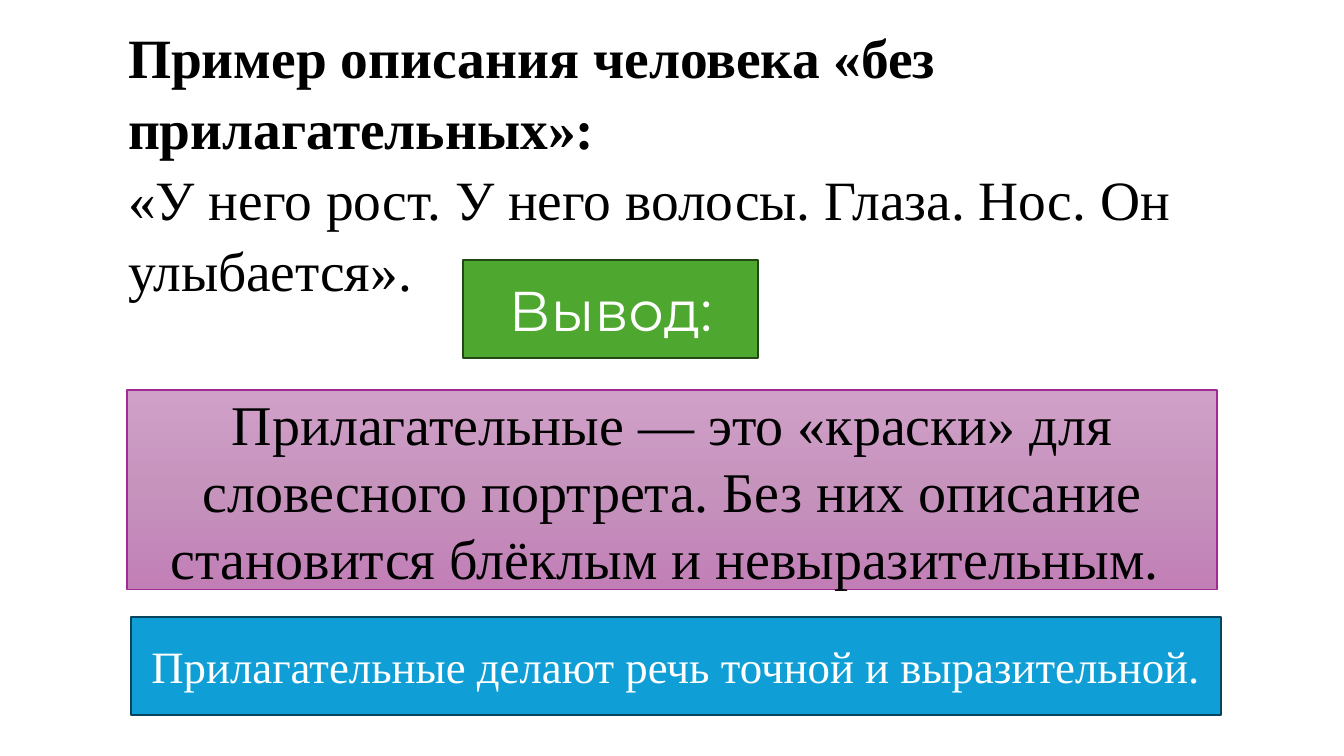
import copy

import lxml.etree
import pptx
import pptx.dml.color
import pptx.enum.dml
import pptx.enum.shapes
import pptx.enum.text
import pptx.oxml.ns
import pptx.util

Inches = pptx.util.Inches
Pt = pptx.util.Pt
qn = pptx.oxml.ns.qn

COLORS = {
    "background": "FFFFFF", "black": "000000", "white": "FFFFFF",
    "green": "4EA72E", "green_line": "224914",
    "blue": "0F9ED5", "blue_line": "07455D",
    "pink_top": "D0A0C8", "pink_middle": "C693BD", "pink_bottom": "C17FB6",
    "pink_line": "A02B93",
}
SERIF = "Times New Roman"


def color(name):
    return pptx.dml.color.RGBColor.from_string(COLORS[name])


def format_run(run, font_name, size, color_name, bold=False):
    run.font.name = font_name
    run.font.size = Pt(size)
    run.font.bold = bold
    run.font.color.rgb = color(color_name)


def add_example(slide, left, top, width, height):
    """Bold heading and sample description in the title placeholder."""
    title = slide.shapes.title
    title.left, title.top = Inches(left), Inches(top)
    title.width, title.height = Inches(width), Inches(height)
    frame = title.text_frame
    frame.word_wrap = True
    frame.auto_size = pptx.enum.text.MSO_AUTO_SIZE.NONE
    frame.vertical_anchor = pptx.enum.text.MSO_ANCHOR.MIDDLE

    paragraph = frame.paragraphs[0]
    paragraph.text = ("Пример описания человека «без прилагательных»:\v"
                      "«У него рост. У него волосы. Глаза. Нос. Он улыбается».")
    paragraph.alignment = pptx.enum.text.PP_ALIGN.LEFT
    paragraph.line_spacing = 1.07
    paragraph.space_after = Pt(8)
    properties = paragraph._p.get_or_add_pPr()
    properties.set("marL", str(Inches(0.25)))
    properties.set("indent", "0")

    heading, description = paragraph.runs
    format_run(heading, SERIF, 39.6, "black", bold=True)
    format_run(description, SERIF, 39.6, "black")
    # The line break takes the size of the text around it
    line_break = paragraph._p.find(qn("a:br"))
    lxml.etree.SubElement(line_break, qn("a:rPr")).set("sz", "3960")


def fill_gradient(shape, top, middle, bottom):
    """Vertical gradient of three evenly spaced colours."""
    shape.fill.gradient()
    shape.fill.gradient_angle = 270
    stop_list = shape._element.spPr.find(".//" + qn("a:gsLst"))
    stop_list.insert(1, copy.deepcopy(stop_list[0]))
    for index, (stop, name) in enumerate(
            zip(shape.fill.gradient_stops, (top, middle, bottom))):
        stop.position = index / 2
        stop.color.rgb = color(name)


def add_box(slide, left, top, width, height, text, font_name, size,
            text_color, fill_colors, line_color, line_width):
    """Outlined rectangle with centred text."""
    shape = slide.shapes.add_shape(
        pptx.enum.shapes.MSO_SHAPE.RECTANGLE,
        Inches(left), Inches(top), Inches(width), Inches(height))
    shape.shadow.inherit = False
    if len(fill_colors) == 1:
        shape.fill.solid()
        shape.fill.fore_color.rgb = color(fill_colors[0])
    else:
        fill_gradient(shape, *fill_colors)
    shape.line.color.rgb = color(line_color)
    shape.line.width = Pt(line_width)

    frame = shape.text_frame
    frame.word_wrap = True
    frame.vertical_anchor = pptx.enum.text.MSO_ANCHOR.MIDDLE
    frame.text = text
    paragraph = frame.paragraphs[0]
    paragraph.alignment = pptx.enum.text.PP_ALIGN.CENTER
    format_run(paragraph.runs[0], font_name, size, text_color)


def main():
    presentation = pptx.Presentation()
    presentation.slide_width = Inches(13.33)
    presentation.slide_height = Inches(7.5)
    slide = presentation.slides.add_slide(presentation.slide_layouts[5])
    slide.background.fill.solid()
    slide.background.fill.fore_color.rgb = color("background")

    add_example(slide, 0.92, 0, 11.5, 3.18)

    # Conclusion label
    add_box(slide, 4.59, 2.58, 2.93, 0.97, "Вывод:", "Montserrat", 40,
            "white", ["green"], "green_line", 1.5)
    # Main conclusion
    add_box(slide, 1.26, 3.87, 10.81, 1.98,
            "Прилагательные — это «краски» для словесного портрета. "
            "Без них описание становится блёклым и невыразительным. ",
            SERIF, 40, "black",
            ["pink_top", "pink_middle", "pink_bottom"], "pink_line", 1)
    # Summary
    add_box(slide, 1.3, 6.12, 10.81, 0.97,
            "Прилагательные делают речь точной и выразительной.",
            SERIF, 32, "white", ["blue"], "blue_line", 1.5)

    presentation.save("out.pptx")


if __name__ == "__main__":
    main()
